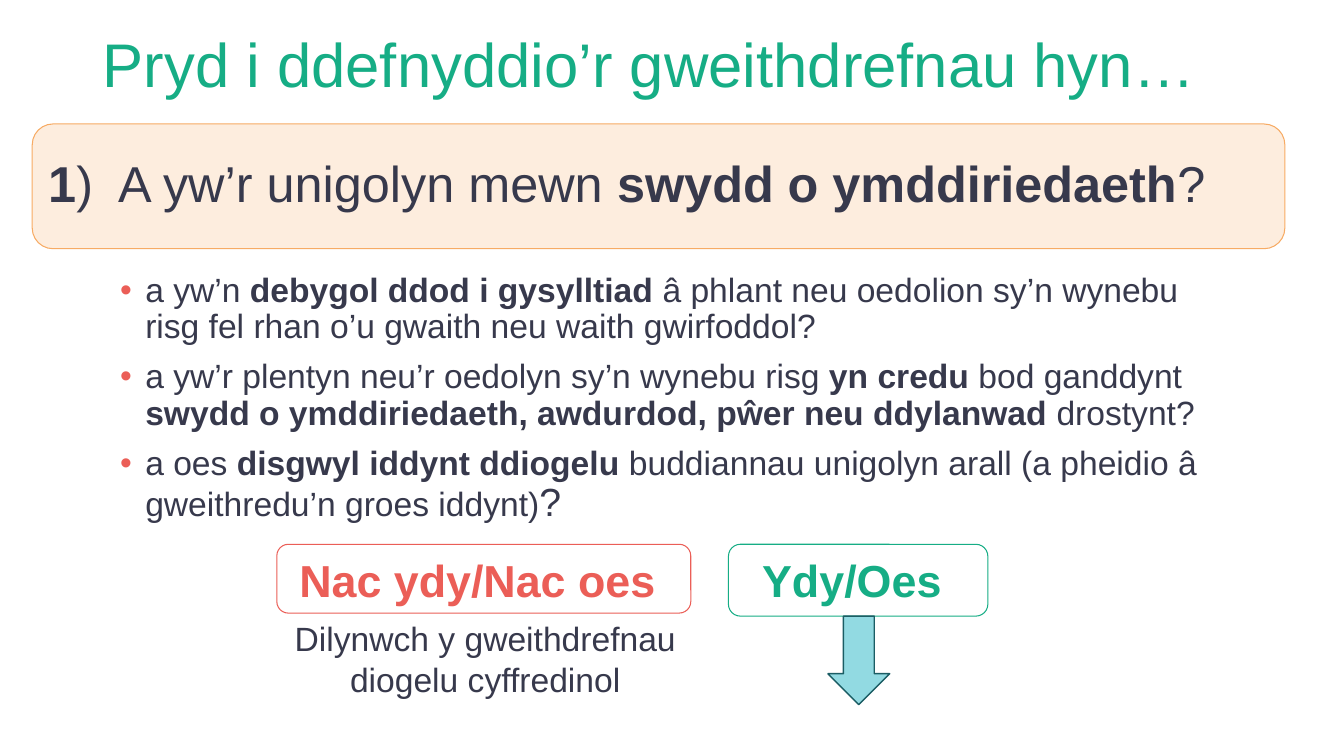
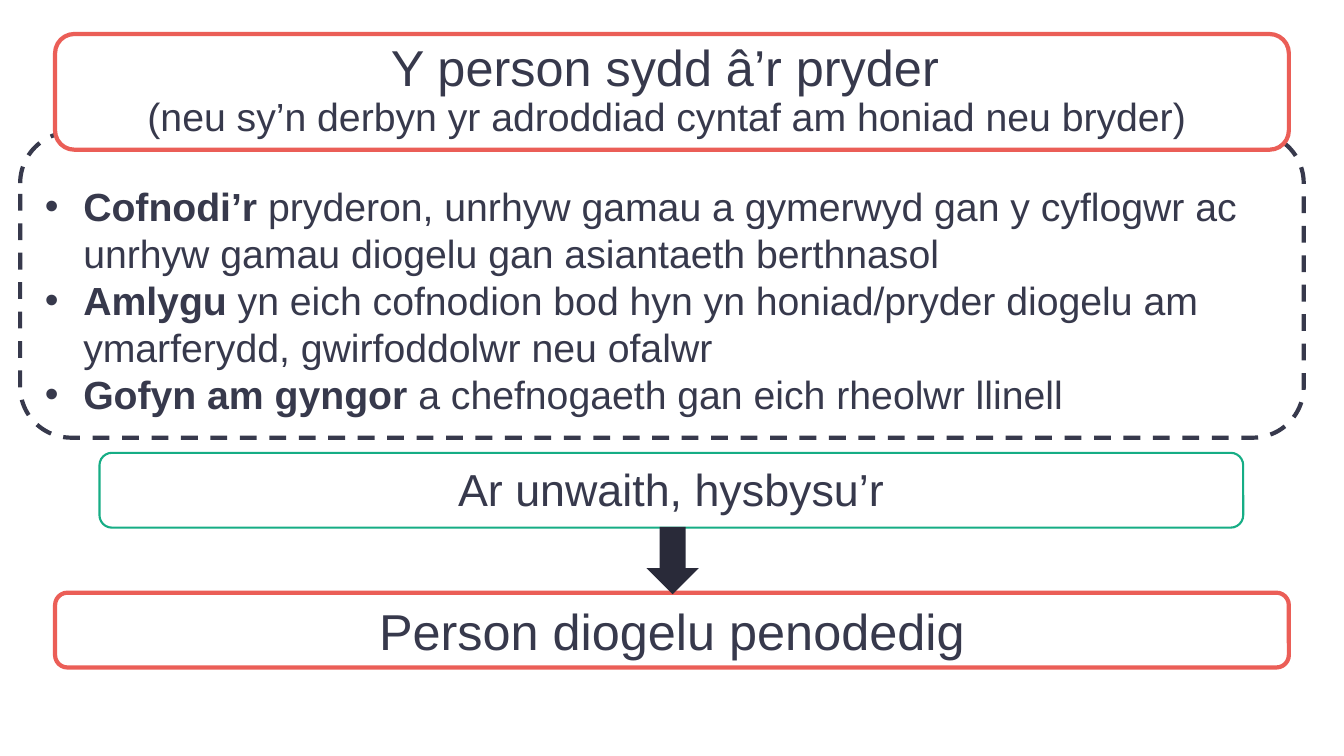
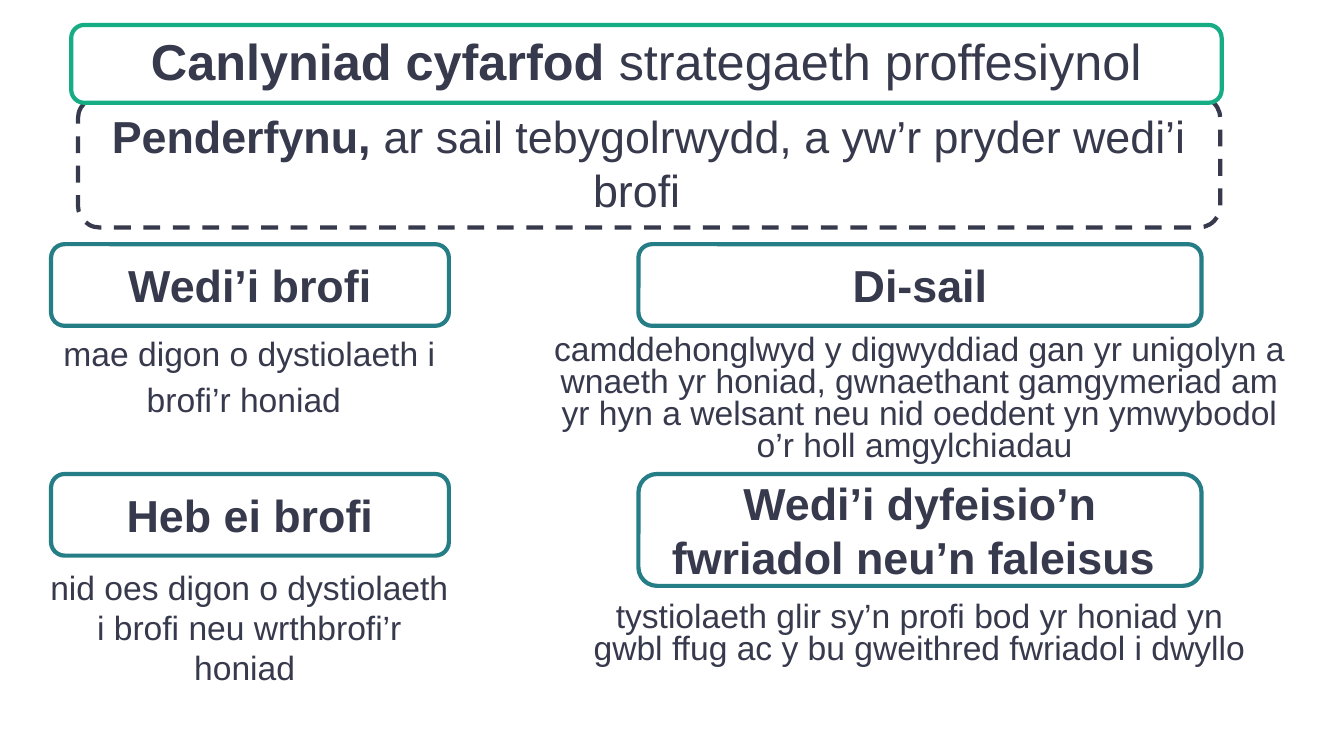
from lxml import etree
from pptx import Presentation
from pptx.dml.color import RGBColor
from pptx.enum.dml import MSO_LINE
from pptx.enum.shapes import MSO_SHAPE
from pptx.enum.text import MSO_ANCHOR, PP_ALIGN
from pptx.oxml.ns import qn
from pptx.util import Emu, Inches, Pt

ROUND, ARROW = MSO_SHAPE.ROUNDED_RECTANGLE, MSO_SHAPE.DOWN_ARROW
TOP, MID, LOW = MSO_ANCHOR.TOP, MSO_ANCHOR.MIDDLE, MSO_ANCHOR.BOTTOM
LEFT, MIDST = PP_ALIGN.LEFT, PP_ALIGN.CENTER
DASH = MSO_LINE.DASH

FONT = "Arial"
INK, GREEN, RED, TEAL = "37394C", "16AD85", "EB5E57", "257D86"
WHITE, PEACH, AMBER = "FFFFFF", "FDEDDE", "F7AB64"
AQUA, DEEP, NIGHT = "92DAE2", "1B5D64", "292A39"
TITLE_ONLY, BLANK = 5, 6


def rgb(code):
    return RGBColor.from_string(code)


def mark(para, color, indent):
    """Give the paragraph a coloured round bullet with a hanging indent."""
    props = para._p.get_or_add_pPr()
    props.set("marL", str(Inches(indent)))
    props.set("indent", str(-Inches(indent)))
    tint = etree.SubElement(props, qn("a:buClr"))
    etree.SubElement(tint, qn("a:srgbClr"), val=color)
    etree.SubElement(props, qn("a:buFont"), typeface=FONT)
    etree.SubElement(props, qn("a:buChar"), char="•")


class Deck:
    """Holds the style and the current slide; places are percent of its size."""

    def __init__(self):
        self.prs = Presentation()
        self.prs.slide_width = Inches(13.33)
        self.prs.slide_height = Inches(7.5)

    def page(self, layout=BLANK):
        self.slide = self.prs.slides.add_slide(self.prs.slide_layouts[layout])

    def place(self, at):
        wide, high = self.prs.slide_width, self.prs.slide_height
        return [Emu(round(share * side / 100))
                for share, side in zip(at, (wide, high, wide, high))]

    def fill_in(self, shape, texts, size, color=INK, bold=False, align=MIDST,
                anchor=MID, lead=None, gap=0, bullet=None, tail=None):
        """Fill the frame; *stars* mark bold, tail is (text, size) at the end."""
        frame = shape.text_frame
        frame.word_wrap = True
        frame.vertical_anchor = anchor
        for i, text in enumerate(texts):
            para = frame.paragraphs[0] if i == 0 else frame.add_paragraph()
            if bullet:
                mark(para, *bullet)
            para.alignment = align
            if lead:
                para.line_spacing = lead
            para.space_before = Pt(gap if i else 0)
            font = para.font
            font.name, font.size, font.bold = FONT, Pt(size), bold
            font.color.rgb = rgb(color)
            for k, part in enumerate(text.split("*")):
                if part:
                    run = para.add_run()
                    run.text = part
                    if k % 2:
                        run.font.bold = True
        if tail:
            words, small = tail
            if words.startswith("\n"):
                para.add_line_break()
            run = para.add_run()
            run.text = words.lstrip("\n")
            run.font.size = Pt(small)

    def title(self, at, text):
        head = self.slide.shapes.title
        head.left, head.top, head.width, head.height = self.place(at)
        self.fill_in(head, [text], 44, GREEN, align=LEFT, lead=0.9)

    def shape(self, kind, at, fill=None, line=None, width=3, dash=None):
        item = self.slide.shapes.add_shape(kind, *self.place(at))
        item.shadow.inherit = False
        if fill:
            item.fill.solid()
            item.fill.fore_color.rgb = rgb(fill)
        else:
            item.fill.background()
        if line:
            item.line.color.rgb = rgb(line)
            item.line.width = Pt(width)
            item.line.dash_style = dash
        else:
            item.line.fill.background()
        return item

    def box(self, at, texts, size, fill=None, line=None, width=3, dash=None,
            **style):
        item = self.shape(ROUND, at, fill, line, width, dash)
        self.fill_in(item, texts, size, **style)

    def text(self, at, texts, size, **style):
        item = self.slide.shapes.add_textbox(*self.place(at))
        self.fill_in(item, texts, size, anchor=TOP, **style)


def trust(deck):
    deck.page(TITLE_ONLY)
    deck.title((6.9, 0.3, 86.2, 17.3), "Pryd i ddefnyddio’r gweithdrefnau hyn…")
    deck.box((2.4, 16.4, 93.2, 16.5),
             ["*1*)  A yw’r unigolyn mewn *swydd o ymddiriedaeth*?"], 36,
             PEACH, AMBER, 0.75, align=LEFT, lead=0.9)
    deck.text((8.2, 35.5, 81.7, 34.5), [
        "a yw’n *debygol ddod i gysylltiad *â phlant neu oedolion sy’n wynebu "
        "risg fel rhan o’u gwaith neu waith gwirfoddol?",
        "a yw’r plentyn neu’r oedolyn sy’n wynebu risg *yn credu *bod ganddynt "
        "*swydd o ymddiriedaeth, awdurdod, pŵer neu ddylanwad *drostynt?",
        "a oes *disgwyl iddynt ddiogelu *buddiannau unigolyn arall "
        "(a pheidio â gweithredu’n groes iddynt)",
    ], 24, align=LEFT, lead=0.9, gap=10, bullet=(RED, 0.25), tail=("?", 28))
    deck.text((20.9, 81.1, 30.4, 12.1),
              ["Dilynwch y gweithdrefnau diogelu cyffredinol"], 24)
    for at, reply, color in (
            ((20.6, 72, 30.8, 9.1), "Nac ydy/Nac oes ", RED),
            ((54.2, 72, 19.3, 9.5), "Ydy/Oes ", GREEN)):
        deck.box(at, [reply], 32, None, color, 0.75,
                 color=color, bold=True, anchor=TOP)
    deck.shape(ARROW, (61.6, 81.5, 4.6, 11.7), AQUA, DEEP, 1)


def report(deck):
    deck.page()
    deck.box((4.1, 78.4, 91.8, 9.9), ["Person diogelu penodedig"], 36,
             WHITE, RED)
    deck.box((1.5, 17.5, 95.5, 40.4), [
        "*Cofnodi’r *pryderon, unrhyw gamau a gymerwyd gan y cyflogwr ac "
        "unrhyw gamau diogelu gan asiantaeth berthnasol",
        "*Amlygu *yn eich cofnodion bod hyn yn honiad/pryder diogelu am "
        "ymarferydd, gwirfoddolwr neu ofalwr",
        "*Gofyn am gyngor *a chefnogaeth gan eich rheolwr llinell",
    ], 28, None, INK, dash=DASH, align=LEFT, anchor=LOW, bullet=(INK, 0.38))
    deck.box((4.1, 4.5, 91.8, 15.3), ["Y person sydd â’r pryder "], 36,
             WHITE, RED, lead=0.9,
             tail=("\n(neu sy’n derbyn yr adroddiad cyntaf am honiad neu bryder) ",
                   28))
    deck.box((7.4, 59.9, 85.1, 9.9), ["Ar unwaith, hysbysu’r"], 32,
             WHITE, GREEN, 1.5, anchor=TOP)
    deck.shape(ARROW, (48.1, 69.7, 3.9, 8.9), NIGHT)


def outcome(deck):
    deck.page()
    deck.box((5.8, 12.8, 85, 17.3),
             ["*Penderfynu, *ar sail tebygolrwydd, a yw’r pryder wedi’i brofi  "],
             32, WHITE, INK, dash=DASH, anchor=LOW)
    deck.box((5.3, 3.3, 85.6, 10.3),
             ["*Canlyniad cyfarfod *strategaeth proffesiynol"], 36,
             WHITE, GREEN, lead=0.9)
    first, second = 32.3, 62.7
    near, far = (3.8, 29.6), (47.5, 41.9)
    for (left, wide), top, high, name in (
            (near, first, 10.8, "Wedi’i brofi"),
            (near, second, 10.8, "Heb ei brofi"),
            (far, first, 10.8, "Di-sail"),
            (far, second, 14.8, "Wedi’i dyfeisio’n fwriadol neu’n faleisus ")):
        deck.box((left, top, wide, high), [name], 32, None, TEAL, bold=True)
    for top, note, tail in (
            (40.1, "mae digon o dystiolaeth i brofi’r honiad", (" ", 28)),
            (73.2, "nid oes digon o dystiolaeth i brofi neu wrthbrofi’r honiad ",
             None)):
        deck.box((2, top, 33.1, 19.5), [note], 24, tail=tail)
    for at, note in (
            ((40.1, 43.7, 56.6, 14.3),
             "camddehonglwyd y digwyddiad gan yr unigolyn a wnaeth yr honiad, "
             "gwnaethant gamgymeriad am yr hyn a welsant neu nid oeddent yn "
             "ymwybodol o’r holl amgylchiadau "),
            ((43.4, 79.1, 50, 14.3),
             "tystiolaeth glir sy’n profi bod yr honiad yn gwbl ffug ac y bu "
             "gweithred fwriadol i dwyllo")):
        deck.text(at, [note], 24, lead=0.8)


def main():
    deck = Deck()
    for build in (trust, report, outcome):
        build(deck)
    deck.prs.save("out.pptx")


if __name__ == "__main__":
    main()
